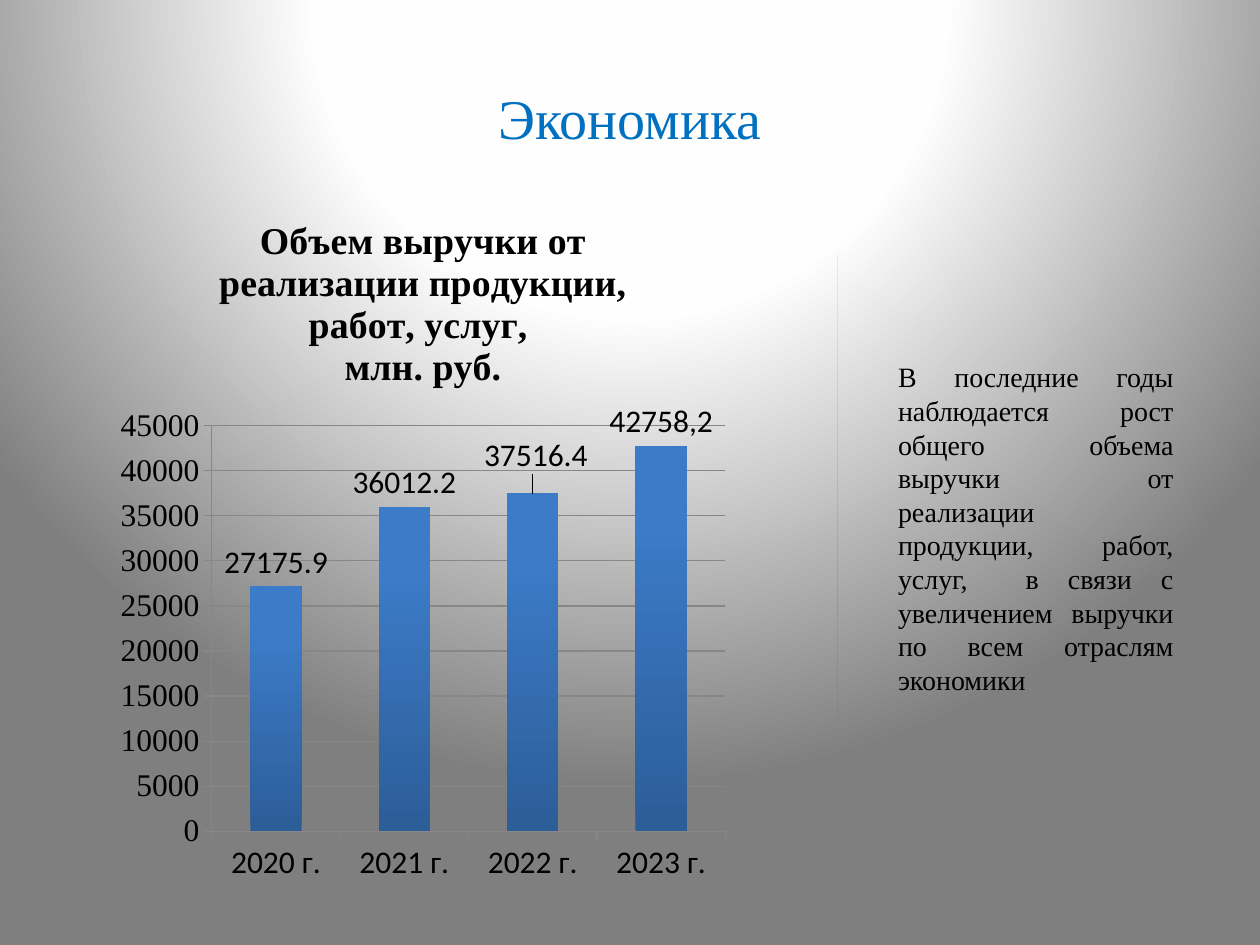
from lxml.etree import SubElement
from pptx import Presentation
from pptx.chart.data import CategoryChartData
from pptx.dml.color import RGBColor
from pptx.enum.chart import XL_CHART_TYPE as ChartType, XL_LABEL_POSITION as LabelPosition
from pptx.enum.chart import XL_TICK_MARK as TickMark
from pptx.enum.shapes import MSO_SHAPE as Shape
from pptx.enum.text import MSO_ANCHOR as Anchor, PP_ALIGN as Align
from pptx.oxml.ns import qn
from pptx.util import Pt

PX = 914400 // 126
SERIF, SANS = "Times New Roman", "Calibri"
BLACK, BLUE, GRID = "000000", "0070C0", "878787"
BACKDROP = [(0, "FFFFFF"), (40, "FEFEFE"), (100, "7F7F7F")]
REVENUE = {"2020 г.": 27175.9, "2021 г.": 36012.2, "2022 г.": 37516.4, "2023 г.": 42758.2}
CHART_TITLE = ["Объем выручки от реализации продукции, работ, услуг, ", "млн. руб."]
COMMENT = ("В последние годы наблюдается рост общего объема выручки от реализации "
           "продукции, работ, услуг,  в связи с увеличением выручки по всем отраслям экономики")


def color(value):
    return RGBColor.from_string(value)


def set_values(target, values):
    for name, value in values.items():
        setattr(target, name, value)


def set_font(font, size, name=SERIF, fill=BLACK, bold=False):
    set_values(font, {"size": Pt(size), "name": name, "bold": bold})
    font.color.rgb = color(fill)


class SlideBuilder:
    def __init__(self, deck):
        self.slide = deck.slides.add_slide(deck.slide_layouts[5])

    def place(self, shape, left, top, width, height):
        sides = {"left": left, "top": top, "width": width, "height": height}
        set_values(shape, {side: length * PX for side, length in sides.items()})

    def background(self, stops):
        """Fill the page with a circular gradient centred above its top edge."""
        fill = self.slide.background.fill
        fill.gradient()
        gradient = self.slide.element.find(".//" + qn("p:bgPr")).find(qn("a:gradFill"))
        for child in list(gradient):
            gradient.remove(child)
        stop_list = SubElement(gradient, qn("a:gsLst"))
        for percent, value in stops:
            stop = SubElement(stop_list, qn("a:gs"), pos=str(percent * 1000))
            SubElement(stop, qn("a:srgbClr"), val=value)
        circle = SubElement(gradient, qn("a:path"), {"path": "circle"})
        SubElement(circle, qn("a:fillToRect"), l="50000", t="-80000", r="50000", b="180000")

    def title(self, text, *area):
        title = self.slide.shapes.title
        self.place(title, *area)
        title.text_frame.vertical_anchor = Anchor.MIDDLE
        para = title.text_frame.paragraphs[0]
        para.alignment = Align.CENTER
        span = para.add_run()
        span.text = text
        set_font(span.font, 32, fill=BLUE)

    def comment(self, text, *area):
        """Add a text panel that is filled with the slide background."""
        panel = self.slide.shapes.add_shape(Shape.RECTANGLE, 0, 0, 0, 0)
        self.place(panel, *area)
        panel.shadow.inherit = False
        panel.line.fill.background()
        panel.element.remove(panel.element.find(qn("p:style")))
        panel.element.set("useBgFill", "1")
        frame = panel.text_frame
        set_values(frame, {"word_wrap": True, "vertical_anchor": Anchor.TOP,
                           "margin_left": 60 * PX, "margin_top": 105 * PX})
        para = frame.paragraphs[0]
        set_values(para, {"alignment": Align.JUSTIFY, "line_spacing": Pt(19.2)})
        span = para.add_run()
        span.text = text
        set_font(span.font, 16)

    def column_chart(self, values, title_lines, *area):
        data = CategoryChartData()
        data.categories = list(values)
        data.add_series("Series 1", list(values.values()))
        left, top, width, height = (length * PX for length in area)
        chart = self.slide.shapes.add_chart(
            ChartType.COLUMN_CLUSTERED, left, top, width, height, data).chart
        set_font(chart.font, 18, SANS)
        chart.has_legend = False
        self.chart_title(chart, title_lines)
        self.axes(chart)
        self.columns(chart.plots[0])
        self.shift_label(chart, 2, 0.005, -0.02)

    def chart_title(self, chart, lines):
        chart.has_title = True
        chart.chart_title.include_in_layout = False
        frame = chart.chart_title.text_frame
        for index, line in enumerate(lines):
            para = frame.add_paragraph() if index else frame.paragraphs[0]
            span = para.add_run()
            span.text = line
            set_font(span.font, 21.6, bold=True)

    def axes(self, chart):
        category_axis, value_axis = chart.category_axis, chart.value_axis
        set_values(value_axis, {"minimum_scale": 0, "maximum_scale": 45000, "major_unit": 5000,
                                "has_major_gridlines": True})
        set_font(category_axis.tick_labels.font, 18, SANS)
        set_font(value_axis.tick_labels.font, 18)
        for axis in (category_axis, value_axis):
            axis.major_tick_mark = TickMark.OUTSIDE
        for part in (category_axis, value_axis, value_axis.major_gridlines):
            part.format.line.color.rgb = color(GRID)
            part.format.line.width = Pt(0.75)

    def columns(self, plot):
        set_values(plot, {"gap_width": 150, "vary_by_categories": False})
        series = plot.series[0]
        fill = series.format.fill
        fill.gradient()
        fill.gradient_angle = 90
        for stop, position, value in zip(fill.gradient_stops, (0, 0.8), ("2C5D98", "3C7BC7")):
            stop.position = position
            stop.color.rgb = color(value)
        labels = series.data_labels
        set_values(labels, {"show_value": True, "position": LabelPosition.OUTSIDE_END})
        set_font(labels.font, 18, SANS)
        last_label = series.points[3].data_label
        span = last_label.text_frame.paragraphs[0].add_run()
        span.text = "42758,2"
        set_font(span.font, 18, SANS)
        last_label.position = LabelPosition.OUTSIDE_END

    def shift_label(self, chart, index, right, down):
        """Move one data label by fractions of the chart's width and height."""
        label = chart.plots[0].series[0].points[index].data_label
        set_font(label.font, 18, SANS)
        label.position = LabelPosition.OUTSIDE_END
        for node in chart.element.iter(qn("c:dLbl")):
            number = node.find(qn("c:idx"))
            if number.get("val") == str(index):
                layout = SubElement(node, qn("c:layout"))
                number.addnext(layout)
                manual = SubElement(layout, qn("c:manualLayout"))
                SubElement(manual, qn("c:x"), val=str(right))
                SubElement(manual, qn("c:y"), val=str(down))


def main():
    deck = Presentation()
    set_values(deck, {"slide_width": 1260 * PX, "slide_height": 945 * PX})
    page = SlideBuilder(deck)
    page.background(BACKDROP)
    page.title("Экономика", 63, 38, 1134, 158)
    page.column_chart(REVENUE, CHART_TITLE, 108, 193, 630, 703)
    page.comment(COMMENT, 838, 255, 348, 615)
    deck.save("out.pptx")


if __name__ == "__main__":
    main()
